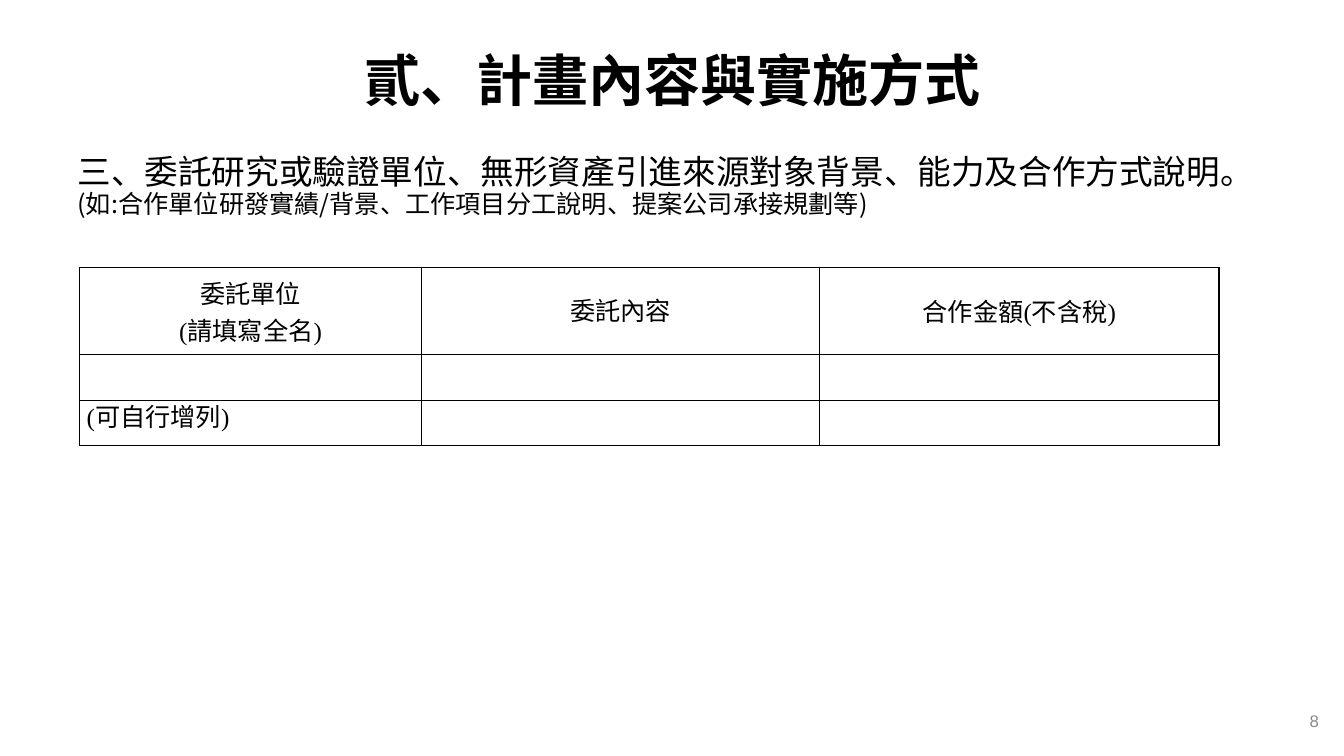
"""Build the project content slide with its commissioned-unit table."""
from dataclasses import dataclass
from typing import Optional

from lxml.etree import SubElement
from pptx import Presentation
from pptx.dml.color import RGBColor
from pptx.enum.text import MSO_ANCHOR, PP_ALIGN
from pptx.oxml import parse_xml
from pptx.oxml.ns import nsdecls, qn
from pptx.util import Inches, Pt

COLORS = {"text": "000000", "border": "000000", "number": "898989"}
SERIF, SANS, ARIAL = "Times New Roman", "Noto Sans CJK SC", "Arial"


@dataclass
class Para:
    text: str
    size: float
    font: str = SERIF
    color: str = "text"
    bold: bool = False
    align: PP_ALIGN = PP_ALIGN.LEFT
    spacing: Optional[float | Pt] = None


@dataclass
class Box:
    left: float
    top: float
    width: float
    height: float
    paras: list[Para]
    anchor: MSO_ANCHOR = MSO_ANCHOR.MIDDLE


@dataclass
class CellText:
    row: int
    col: int
    paras: list[Para]
    anchor: MSO_ANCHOR = MSO_ANCHOR.MIDDLE


def header(text: str, spacing: Optional[Pt] = None) -> Para:
    return Para(text, 18, align=PP_ALIGN.CENTER, spacing=spacing)


BOXES = [
    Box(0.67, 0.3, 12, 1.05, [
        Para("貳、計畫內容與實施方式", 40, bold=True, align=PP_ALIGN.CENTER, spacing=0.9)]),
    Box(0.67, 1.49, 12, 5.21, [
        Para("三、委託研究或驗證單位、無形資產引進來源對象背景、能力及合作方式說明。",
             24, SANS, spacing=0.9),
        Para("(如:合作單位研發實績/背景、工作項目分工說明、提案公司承接規劃等)",
             18, SANS, spacing=0.9)], MSO_ANCHOR.TOP),
    Box(10.07, 6.95, 3.11, 0.4, [
        Para("8", 12, ARIAL, "number", align=PP_ALIGN.RIGHT)]),
]
COLS = [3.39, 3.95, 3.96]
ROWS = [0.87, 0.45, 0.45]
CELLS = [
    CellText(0, 0, [header("委託單位"), header("(請填寫全名)")]),
    CellText(0, 1, [header("委託內容", Pt(24))]),
    CellText(0, 2, [header("合作金額(不含稅)")]),
    CellText(2, 0, [Para("(可自行增列)", 18, spacing=Pt(24))], MSO_ANCHOR.TOP),
]


def write(tf, paras: list[Para]) -> None:
    for i, para in enumerate(paras):
        p = tf.add_paragraph() if i else tf.paragraphs[0]
        p.alignment = para.align
        if para.spacing is not None:
            p.line_spacing = para.spacing
        r = p.add_run()
        r.text = para.text
        r.font.name = para.font
        r.font.size = Pt(para.size)
        r.font.bold = para.bold
        r.font.color.rgb = RGBColor.from_string(COLORS[para.color])
        SubElement(r.font._element, qn("a:ea")).set("typeface", SANS)


def add_box(slide, box: Box) -> None:
    sp = slide.shapes.add_textbox(
        Inches(box.left), Inches(box.top), Inches(box.width), Inches(box.height))
    tf = sp.text_frame
    tf.word_wrap = True
    tf.vertical_anchor = box.anchor
    write(tf, box.paras)


def style_cell(cell) -> None:
    cell.margin_left = cell.margin_right = Inches(0.07)
    cell.margin_top = cell.margin_bottom = 0
    cell.fill.background()
    tc_pr = cell._tc.get_or_add_tcPr()
    for i, side in enumerate(("lnL", "lnR", "lnT", "lnB")):
        tc_pr.insert(i, parse_xml(
            f'<a:{side} {nsdecls("a")} w="{Pt(1)}"><a:solidFill>'
            f'<a:srgbClr val="{COLORS["border"]}"/></a:solidFill></a:{side}>'))


def add_unit_table(slide) -> None:
    table = slide.shapes.add_table(
        len(ROWS), len(COLS), Inches(0.79), Inches(2.65),
        Inches(sum(COLS)), Inches(sum(ROWS))).table
    table.first_row = table.horz_banding = False
    for col, width in zip(table.columns, COLS):
        col.width = Inches(width)
    for row, height in zip(table.rows, ROWS):
        row.height = Inches(height)
    for cell in table.iter_cells():
        style_cell(cell)
    for item in CELLS:
        cell = table.cell(item.row, item.col)
        cell.vertical_anchor = item.anchor
        write(cell.text_frame, item.paras)


def main() -> None:
    prs = Presentation()
    prs.slide_width, prs.slide_height = Inches(13.33), Inches(7.5)
    slide = prs.slides.add_slide(prs.slide_layouts[6])
    for box in BOXES:
        add_box(slide, box)
    add_unit_table(slide)
    prs.save("out.pptx")


if __name__ == "__main__":
    main()
